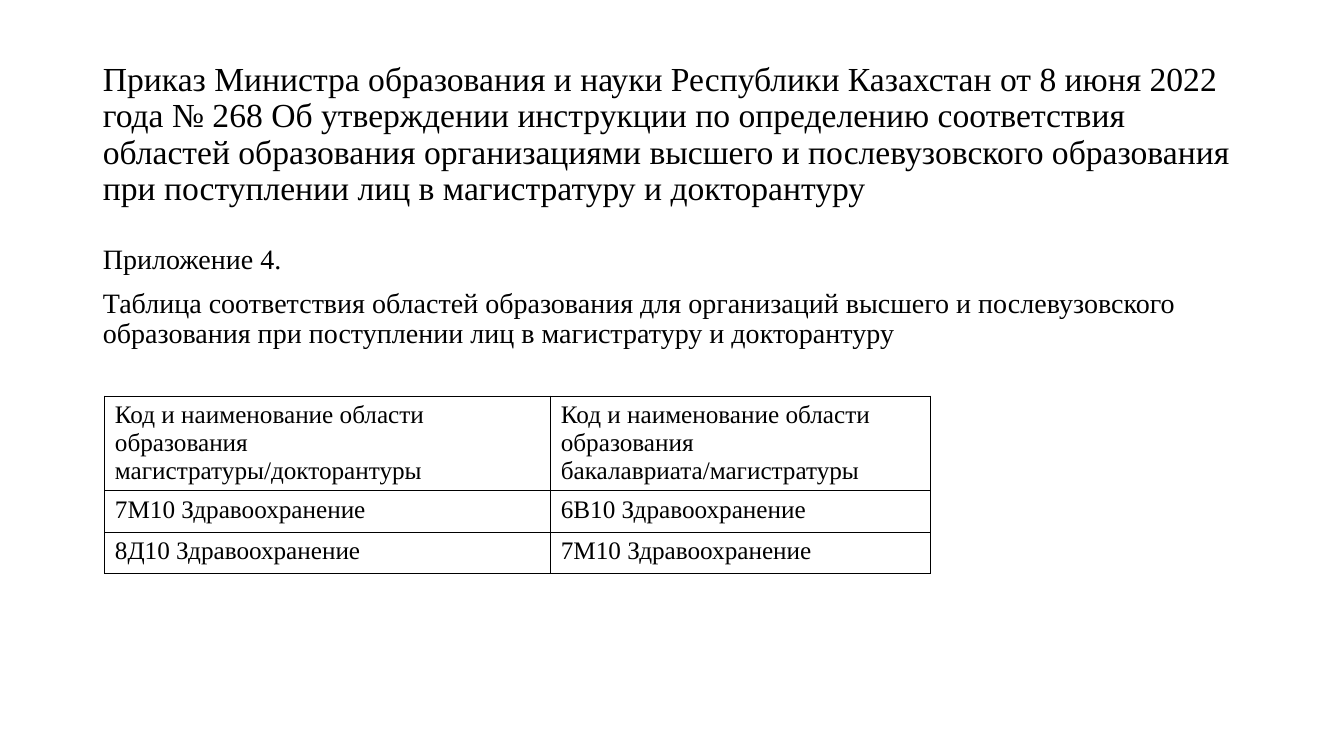
from lxml import etree
from pptx import Presentation
from pptx import util as u
from pptx.dml.color import RGBColor
from pptx.enum import text
from pptx.oxml.ns import qn

WIDTH, HEIGHT = 13.33, 7.5
FONT = "Times New Roman"
BLACK = "000000"
MARGIN = 0.92
CONTENT_WIDTH = WIDTH - 2 * MARGIN

TITLE = (
    "Приказ Министра образования и науки Республики Казахстан от 8 июня 2022 года "
    "№ 268 Об утверждении инструкции по определению соответствия областей образования "
    "организациями высшего и послевузовского образования при поступлении лиц "
    "в магистратуру и докторантуру"
)
APPENDIX = [
    "Приложение 4.",
    "Таблица соответствия областей образования для организаций высшего и "
    "послевузовского образования при поступлении лиц в магистратуру и докторантуру",
]
AREAS = [
    ["Код и наименование области образования магистратуры/докторантуры",
     "Код и наименование области образования бакалавриата/магистратуры"],
    ["7М10 Здравоохранение", "6В10 Здравоохранение"],
    ["8Д10 Здравоохранение", "7М10 Здравоохранение"],
]
COLUMN_SHARES = [0.54, 0.46]
ROW_HEIGHTS = [0.94, 0.41, 0.41]


def color(value):
    return RGBColor.from_string(value)


def add_run(paragraph, words, size):
    run = paragraph.add_run()
    run.text = words
    run.font.name = FONT
    run.font.size = u.Pt(size)
    run.font.color.rgb = color(BLACK)


def place(shape, box):
    shape.left, shape.top, shape.width, shape.height = map(u.Inches, box)


def fill_title(shape, box):
    place(shape, box)
    frame = shape.text_frame
    frame.auto_size = text.MSO_AUTO_SIZE.NONE
    frame.vertical_anchor = text.MSO_ANCHOR.MIDDLE
    paragraph = frame.paragraphs[0]
    paragraph.alignment = text.PP_ALIGN.LEFT
    paragraph.line_spacing = 0.9
    add_run(paragraph, TITLE, 24)


def fill_body(shape, box):
    place(shape, box)
    frame = shape.text_frame
    frame.auto_size = text.MSO_AUTO_SIZE.NONE
    for index, words in enumerate(APPENDIX):
        paragraph = frame.add_paragraph() if index else frame.paragraphs[0]
        paragraph.line_spacing = 0.9
        paragraph.space_before = u.Pt(10)
        add_run(paragraph, words, 20)
        # Plain paragraph without a bullet
        properties = paragraph._p.get_or_add_pPr()
        properties.set("marL", "0")
        properties.set("indent", "0")
        etree.SubElement(properties, qn("a:buNone"))


def outline_cell(cell):
    properties = cell._tc.get_or_add_tcPr()
    for side in ("lnL", "lnR", "lnT", "lnB"):
        line = etree.SubElement(properties, qn(f"a:{side}"), w=str(u.Pt(1)))
        fill = etree.SubElement(line, qn("a:solidFill"))
        etree.SubElement(fill, qn("a:srgbClr"), val=BLACK)


def add_areas_table(slide, box):
    frame = slide.shapes.add_table(len(AREAS), len(COLUMN_SHARES), *map(u.Inches, box))
    table = frame.table
    table.first_row = table.horz_banding = False
    for column, share in zip(table.columns, COLUMN_SHARES):
        column.width = u.Inches(box[2] * share)
    for row, height, areas in zip(table.rows, ROW_HEIGHTS, AREAS):
        row.height = u.Inches(height)
        for cell, words in zip(row.cells, areas):
            outline_cell(cell)
            cell.fill.background()
            add_run(cell.text_frame.paragraphs[0], words, 18)


def main():
    presentation = Presentation()
    presentation.slide_width = u.Inches(WIDTH)
    presentation.slide_height = u.Inches(HEIGHT)
    slide = presentation.slides.add_slide(presentation.slide_layouts[1])
    # Order title, appendix heading, table of matching areas
    fill_title(slide.shapes.title, (MARGIN, 0.4, CONTENT_WIDTH, 1.88))
    fill_body(slide.placeholders[1], (MARGIN, 2.38, CONTENT_WIDTH, 4.37))
    add_areas_table(slide, (1.04, 3.93, 8.19, sum(ROW_HEIGHTS)))
    presentation.save("out.pptx")


if __name__ == "__main__":
    main()
